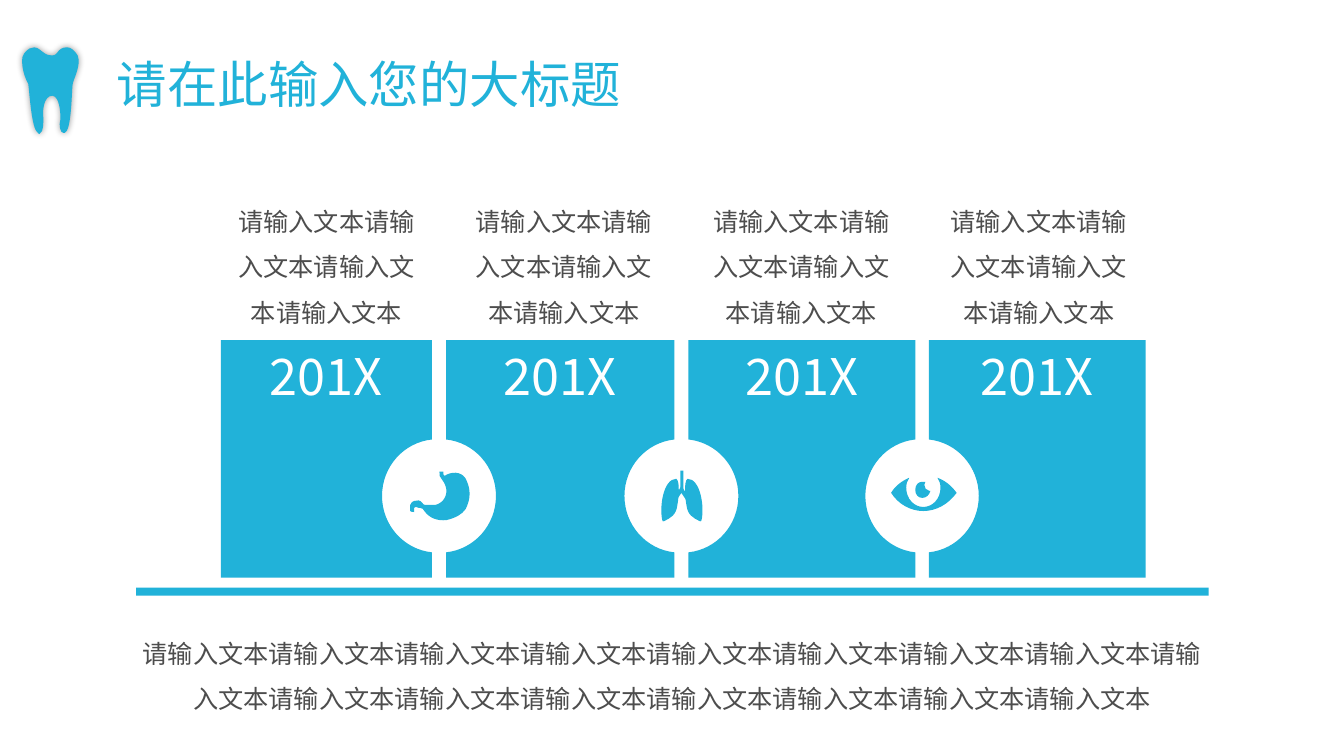
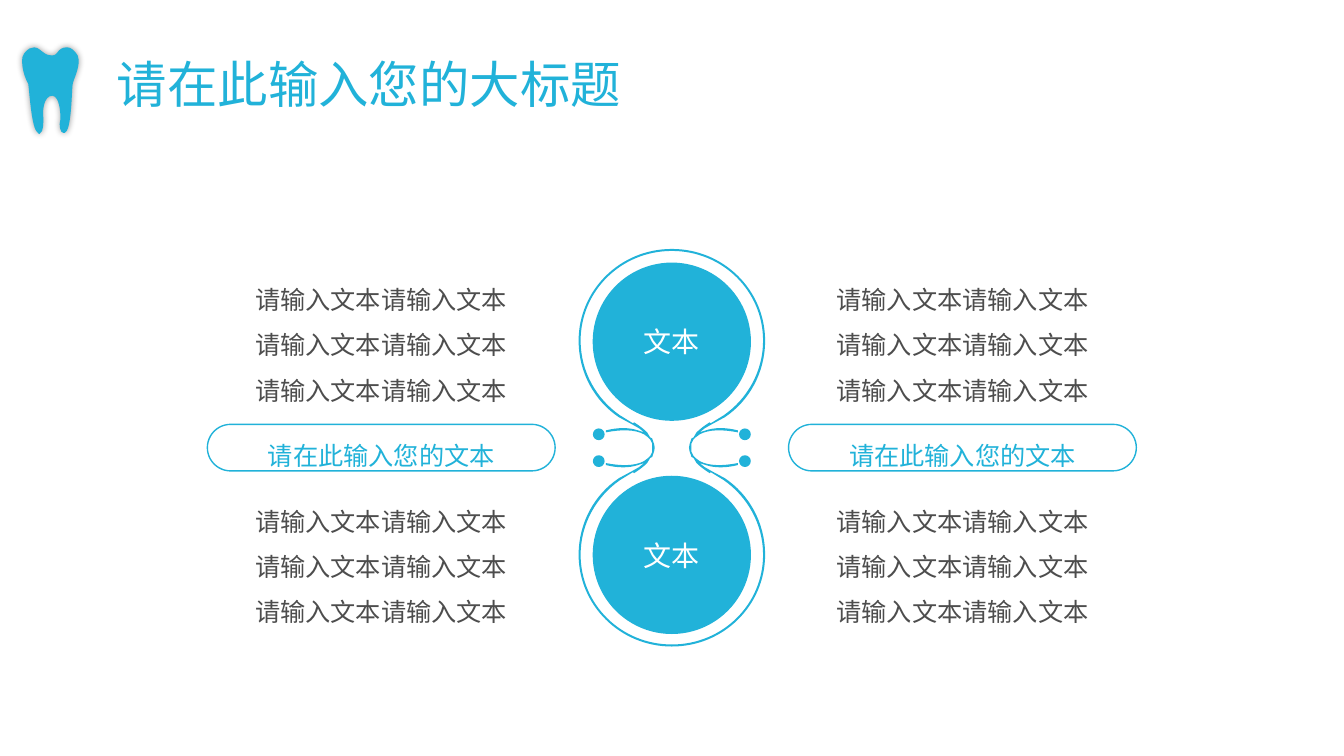
from dataclasses import dataclass
from itertools import chain, product

from lxml import etree
from pptx import Presentation
from pptx.dml.color import RGBColor
from pptx.enum.shapes import MSO_SHAPE
from pptx.enum.text import MSO_ANCHOR, MSO_AUTO_SIZE, PP_ALIGN
from pptx.oxml.ns import qn
from pptx.util import Emu, Inches, Pt

RECTANGLE, OVAL, PILL = MSO_SHAPE.RECTANGLE, MSO_SHAPE.OVAL, MSO_SHAPE.ROUNDED_RECTANGLE
TOP, MIDDLE = MSO_ANCHOR.TOP, MSO_ANCHOR.MIDDLE
LEFT, CENTER = PP_ALIGN.LEFT, PP_ALIGN.CENTER
NO_AUTOFIT = MSO_AUTO_SIZE.NONE

# One grid cell is a tenth of an inch; all lengths below are columns and rows.
CELL = Inches(0.1)
SLIDE_COLUMNS, SLIDE_ROWS = 133.33, 75
COLORS = {"accent": "21B2D9", "body": "4D4D4D", "white": "FFFFFF", "shadow": "000000"}
FONT = "Noto Sans CJK SC"
TITLE = "请在此输入您的大标题"
PHRASE = "请输入文本"
TITLE_ONLY = 5

Point = tuple[float, float]


@dataclass(frozen=True)
class Box:
    left: float
    top: float
    width: float
    height: float

    def emu(self) -> tuple[Emu, ...]:
        return tuple(cells(v) for v in (self.left, self.top, self.width, self.height))


@dataclass(frozen=True)
class TextStyle:
    size: int
    color: str
    align: PP_ALIGN = CENTER
    anchor: MSO_ANCHOR = MIDDLE
    spacing: float = 1.0


@dataclass(frozen=True)
class Contour:
    """A closed outline; each segment takes 1 point (line) or 3 points (curve)."""
    points: list[Point]
    segments: list[int]

    def mirrored(self, axis_x: float | None = None, axis_y: float | None = None) -> "Contour":
        return Contour([(x if axis_x is None else 2 * axis_x - x,
                         y if axis_y is None else 2 * axis_y - y)
                        for x, y in self.points], self.segments)

    def backwards(self) -> "Contour":
        return Contour(self.points[::-1], self.segments[::-1])

    def joined(self, other: "Contour") -> "Contour":
        skip = int(self.points[-1] == other.points[0])
        return Contour(self.points + other.points[skip:],
                       self.segments + [1] * (1 - skip) + other.segments)


@dataclass(frozen=True)
class Panel:
    left: float
    right: float
    notch_left: bool = True
    notch_right: bool = True


TITLE_STYLE = TextStyle(36, "accent", align=LEFT, spacing=0.9)
YEAR_STYLE = TextStyle(36, "white", anchor=TOP)
BODY_STYLE = TextStyle(18, "body", spacing=1.5)
PILL_STYLE = TextStyle(18, "accent", spacing=1.5)
CIRCLE_STYLE = TextStyle(20, "white")

TOOTH = """M 6.3 13.2 C 6.3 13.2 6.3 13.2 6.4 13.2 C 7.1 13 7.1 9.2 7.2 8.4
C 7.2 8 8.1 6.5 7.7 5.5 C 7.4 5 7 4.7 6.7 4.7 C 6.6 4.7 6.6 4.7 6.6 4.7
C 6.2 4.7 5.9 4.9 5.7 5.2 C 5.5 5.5 5.3 5.5 5.2 5.5 C 5.1 5.5 5.1 5.5 5.1 5.5
C 4.6 5.5 4.3 5.2 4.3 5.2 C 4.1 5.1 3.8 4.7 3.4 4.7 C 3.4 4.7 3.4 4.7 3.4 4.7
C 3.1 4.7 2.8 4.8 2.4 5.3 C 2.2 5.5 2.2 5.8 2.2 6.2 C 2.2 7 2.6 8 2.8 8.3
C 2.9 8.9 3.1 12.3 3.6 13 C 3.8 13.2 3.8 13.3 3.9 13.3 C 4 13.3 4 13.3 4 13.2
C 4.3 13.1 4.3 12.2 4.3 11.7 C 4.2 11.1 4.3 9.5 5.2 9.5 C 5.2 9.5 5.2 9.5 5.2 9.5
C 5.9 9.6 6 11.1 6 11.8 C 5.8 12.5 6 13.2 6.3 13.2"""
STOMACH = """M 41.1 50.8 C 40.9 50.8 40.8 50.8 40.7 50.7 C 40.7 50.5 40.7 50.3 40.7 50.1
C 40.8 49.9 40.9 49.7 41.1 49.7 C 41.4 49.6 41.7 49.6 41.9 49.9
C 41.9 50 42.1 50.1 42.2 50.1 C 42.5 50.1 42.8 50.1 43.2 50.1
C 44 49.9 44.5 49.1 44.2 48.2 C 44.1 48 44 47.7 43.8 47.5 C 43.6 47.4 43.6 47.1 43.6 46.8
C 43.7 46.8 43.8 46.8 44 46.8 C 44 46.9 44 47 44 47.1 C 44 47.2 44 47.2 44.1 47.2
C 44.2 47.2 44.3 47.1 44.3 47.1 C 45.1 46.7 46 46.9 46.3 47.7
C 46.7 48.6 46.7 49.5 46.2 50.5 C 45.8 51.1 45.1 51.4 44.3 51.6
C 43.4 51.7 42.6 51.4 42.1 50.7 C 42 50.5 41.9 50.4 41.7 50.4
C 41.6 50.5 41.5 50.3 41.3 50.3 C 41.2 50.3 41.1 50.3 41.1 50.4
C 41.1 50.5 41.1 50.7 41.1 50.8"""
LUNG = """M 67.1 47.5 C 65.8 47.5 65.4 50.3 65.7 51.6 C 65.7 51.7 65.8 51.8 65.9 51.7
C 66.5 51.4 67.1 51.1 67.2 50.1 C 67.3 49.6 67.5 47.8 67.1 47.5"""
BRONCHI = "M 66.8 49.6 L 67.6 48.2 L 68.5 49.6 L 68.2 49.8 L 67.6 48.9 L 67 49.8 L 66.8 49.6"
TRACHEA = "M 67.5 48.6 L 67.5 46.7 L 67.8 46.7 L 67.8 48.6 L 67.5 48.6"
EYE = """M 93 47.4 C 93.2 47.7 93.3 48 93.3 48.4 C 93.3 49.5 92.5 50.3 91.6 50.3
C 90.7 50.3 89.9 49.5 89.9 48.4 C 89.9 48 90 47.7 90.2 47.4 C 89.5 47.7 88.8 48.2 88.4 48.9
C 89.1 50 90.3 50.7 91.6 50.7 C 92.9 50.7 94.1 50 94.9 48.9 C 94.4 48.2 93.8 47.7 93 47.4"""
PUPIL = """M 91.7 48.1 C 91.7 48 91.7 47.9 91.8 47.8 C 91.7 47.8 91.6 47.8 91.5 47.8
C 91.1 47.8 90.8 48.1 90.8 48.6 C 90.8 49.1 91.1 49.4 91.5 49.4
C 91.9 49.4 92.2 49.1 92.3 48.7 C 92.2 48.7 92.2 48.7 92.2 48.7
C 91.9 48.7 91.7 48.4 91.7 48.1"""
HUB_X, HUB_Y = 66.65, 44.42
# Upper right quarter of the hourglass: outer rim down to the waist, inner rim back up.
OUTER_RIM = f"""M {HUB_X} 24.7 C 71.8 24.7 75.9 28.8 75.9 33.8 C 75.9 37 74.3 39.8 71.9 41.4
L 70.6 42.1 C 70.4 42.2 70.1 42.4 69.9 42.5 L 69.4 42.9 L 70 42.7
C 70.9 42.4 72 42.4 73.2 42.7 L 73.2 42.9 C 71.7 42.6 70.3 42.6 69.4 43.1
C 69.3 43.2 69.1 43.3 69 43.4 L 68.8 43.6 L 68.6 44 L 68.6 {HUB_Y}"""
INNER_RIM = f"""M 68.35 {HUB_Y} C 68.4 44.1 68.4 44 68.5 43.8 L 68.6 43.5 L 68.8 43.4
L 69.1 42.9 C 69.4 42.6 69.9 42.2 70.4 41.9 L 70.5 42 L 71.8 41.2
C 74.1 39.6 75.7 36.9 75.7 33.8 C 75.7 28.9 71.7 24.9 {HUB_X} 24.9"""
DOT = """M 73.9 45.17 C 74.22 45.17 74.48 45.43 74.48 45.75 C 74.48 46.07 74.22 46.33 73.9 46.33
C 73.58 46.33 73.32 46.07 73.32 45.75 C 73.32 45.43 73.58 45.17 73.9 45.17"""

PANELS = [Panel(44.25, 66.9), Panel(68.3, 90.8), Panel(92.15, 113.65, notch_right=False),
          Panel(21.9, 42.85, notch_left=False)]
PANEL_TOP, PANEL_BOTTOM = 33.75, 57.3
LUNG_AXIS = 67.65
CAPTION_LEFT, CAPTION_STEP = 21.9, 23.55


def cells(count: float) -> Emu:
    return Emu(round(count * CELL))


def rgb(name: str) -> RGBColor:
    return RGBColor.from_string(COLORS[name])


def contour(outline: str) -> Contour:
    """Read M, L and C commands, given in cells."""
    tokens = iter(outline.split())
    points, segments = [], []
    for command in tokens:
        count = 3 if command == "C" else 1
        points += [(float(next(tokens)), float(next(tokens))) for _ in range(count)]
        if command != "M":
            segments.append(count)
    return Contour(points, segments)


def paint(shape, fill: str, line: str | None = None):
    shape.shadow.inherit = False
    shape.fill.solid()
    shape.fill.fore_color.rgb = rgb(fill)
    if line:
        shape.line.color.rgb = rgb(line)
        shape.line.width = Pt(1)
    else:
        shape.line.fill.background()
    return shape


def bend(shape, segments: list[int]) -> None:
    """Turn each run of three straight segments that stands for a curve into one."""
    lines = iter(list(shape.element.iter(qn("a:lnTo"))))
    for count in segments:
        line = next(lines)
        if count == 3:
            line.tag = qn("a:cubicBezTo")
            for control in (next(lines), next(lines)):
                line.append(control[0])
                control.getparent().remove(control)


def draw_outline(shapes, *outline: Contour):
    builder = shapes.build_freeform(*map(cells, outline[0].points[0]))
    for index, part in enumerate(outline):
        if index:
            builder.move_to(*map(cells, part.points[0]))
        builder.add_line_segments([(cells(x), cells(y)) for x, y in part.points[1:]])
    shape = paint(builder.convert_to_shape(), "accent")
    bend(shape, list(chain.from_iterable(part.segments for part in outline)))
    return shape


def draw_icon(slide, *parts: Contour) -> None:
    shapes = slide.shapes.add_group_shape().shapes if len(parts) > 1 else slide.shapes
    for part in parts:
        draw_outline(shapes, part)


def write(shape, text: str, style: TextStyle) -> None:
    frame = shape.text_frame
    frame.word_wrap = True
    frame.auto_size = NO_AUTOFIT
    frame.vertical_anchor = style.anchor
    frame.text = text
    paragraph = frame.paragraphs[0]
    paragraph.alignment = style.align
    paragraph.line_spacing = style.spacing
    font = paragraph.font
    font.size, font.name = Pt(style.size), FONT
    font.color.rgb = rgb(style.color)
    defaults = paragraph._p.pPr.find(qn("a:defRPr"))
    etree.SubElement(defaults, qn("a:ea"), typeface=FONT)


def add_text(slide, box: Box, text: str, style: TextStyle = BODY_STYLE) -> None:
    write(slide.shapes.add_textbox(*box.emu()), text, style)


def add_titled_slide(deck):
    slide = deck.slides.add_slide(deck.slide_layouts[TITLE_ONLY])
    title = slide.shapes.title
    title.left, title.top, title.width, title.height = Box(10.6, 4, 114.5, 9.3).emu()
    write(title, TITLE, TITLE_STYLE)
    return slide


def put_tooth_on_layout(slide) -> None:
    """Draw the tooth once and hand it to the layout that the slides share."""
    tooth = draw_outline(slide.shapes, contour(TOOTH))
    effects = tooth.element.spPr.find(qn("a:effectLst"))
    shadow = etree.SubElement(effects, qn("a:outerShdw"), blurRad=str(Pt(5)), dist="0",
                              algn="ctr", rotWithShape="0")
    tint = etree.SubElement(shadow, qn("a:srgbClr"), val=COLORS["shadow"])
    etree.SubElement(tint, qn("a:alpha"), val="40000")
    slide.slide_layout.shapes.element.append(tooth.element)


def notch(edge: float, side: int) -> Contour:
    """Arc cut into a panel's edge, downwards; side is 1 on the right, -1 on the left."""
    arc = [(0, 43.6), (2.8, 43.9), (4.95, 46.3), (4.95, 49.2),
           (4.95, 52.1), (2.8, 54.5), (0, 54.8)]
    return Contour([(edge - side * depth, row) for depth, row in arc], [3, 3])


def add_panel(slide, panel: Panel) -> None:
    outline = Contour([(panel.left, PANEL_TOP), (panel.right, PANEL_TOP)], [1])
    if panel.notch_right:
        outline = outline.joined(notch(panel.right, 1))
    outline = outline.joined(
        Contour([(panel.right, PANEL_BOTTOM), (panel.left, PANEL_BOTTOM)], [1]))
    if panel.notch_left:
        outline = outline.joined(notch(panel.left, -1).backwards())
    write(draw_outline(slide.shapes, outline), "201X", YEAR_STYLE)


def build_timeline(slide) -> None:
    for panel in PANELS:
        add_panel(slide, panel)
    lung = contour(LUNG)
    draw_icon(slide, contour(STOMACH))
    draw_icon(slide, lung, lung.mirrored(axis_x=LUNG_AXIS), contour(BRONCHI), contour(TRACHEA))
    draw_icon(slide, contour(EYE), contour(PUPIL))
    paint(slide.shapes.add_shape(RECTANGLE, *Box(13.5, 58.3, 106.4, 0.8).emu()), "accent")
    for index in range(len(PANELS)):
        add_text(slide, Box(CAPTION_LEFT + index * CAPTION_STEP, 18.2, 21, 15), PHRASE * 4)
    add_text(slide, Box(12.4, 61.15, 108.5, 10.3), PHRASE * 16)


def hourglass_outline() -> list[Contour]:
    outer, inner, dot = contour(OUTER_RIM), contour(INNER_RIM), contour(DOT)
    half = outer.joined(outer.mirrored(axis_y=HUB_Y).backwards())
    half = half.joined(inner.mirrored(axis_y=HUB_Y).backwards()).joined(inner)
    dots = [dot.mirrored(*axes) for axes in product((None, HUB_X), (None, HUB_Y))]
    return [*dots, half, half.mirrored(axis_x=HUB_X)]


def build_hourglass(slide) -> None:
    draw_outline(slide.shapes, *hourglass_outline())
    for top in (26.05, 47.2):
        disc = Box(HUB_X - 7.85, top, 15.7, 15.7)
        circle = paint(slide.shapes.add_shape(OVAL, *disc.emu()), "accent")
        write(circle, "文本", CIRCLE_STYLE)
    centers = [HUB_X + side * 28.83 for side in (-1, 1)]
    for center in centers:
        frame = Box(center - 17.25, 42.1, 34.5, 4.62)
        pill = paint(slide.shapes.add_shape(PILL, *frame.emu()), "white", "accent")
        pill.adjustments[0] = 0.5
        write(pill, "请在此输入您的文本", PILL_STYLE)
    for center, top in product(centers, (26.05, 48.05)):
        add_text(slide, Box(center - 13.8, top, 27.6, 14.8), PHRASE * 6)


def main() -> None:
    deck = Presentation()
    deck.slide_width, deck.slide_height = cells(SLIDE_COLUMNS), cells(SLIDE_ROWS)
    timeline, hourglass = add_titled_slide(deck), add_titled_slide(deck)
    put_tooth_on_layout(timeline)
    build_timeline(timeline)
    build_hourglass(hourglass)
    deck.save("out.pptx")


if __name__ == "__main__":
    main()
